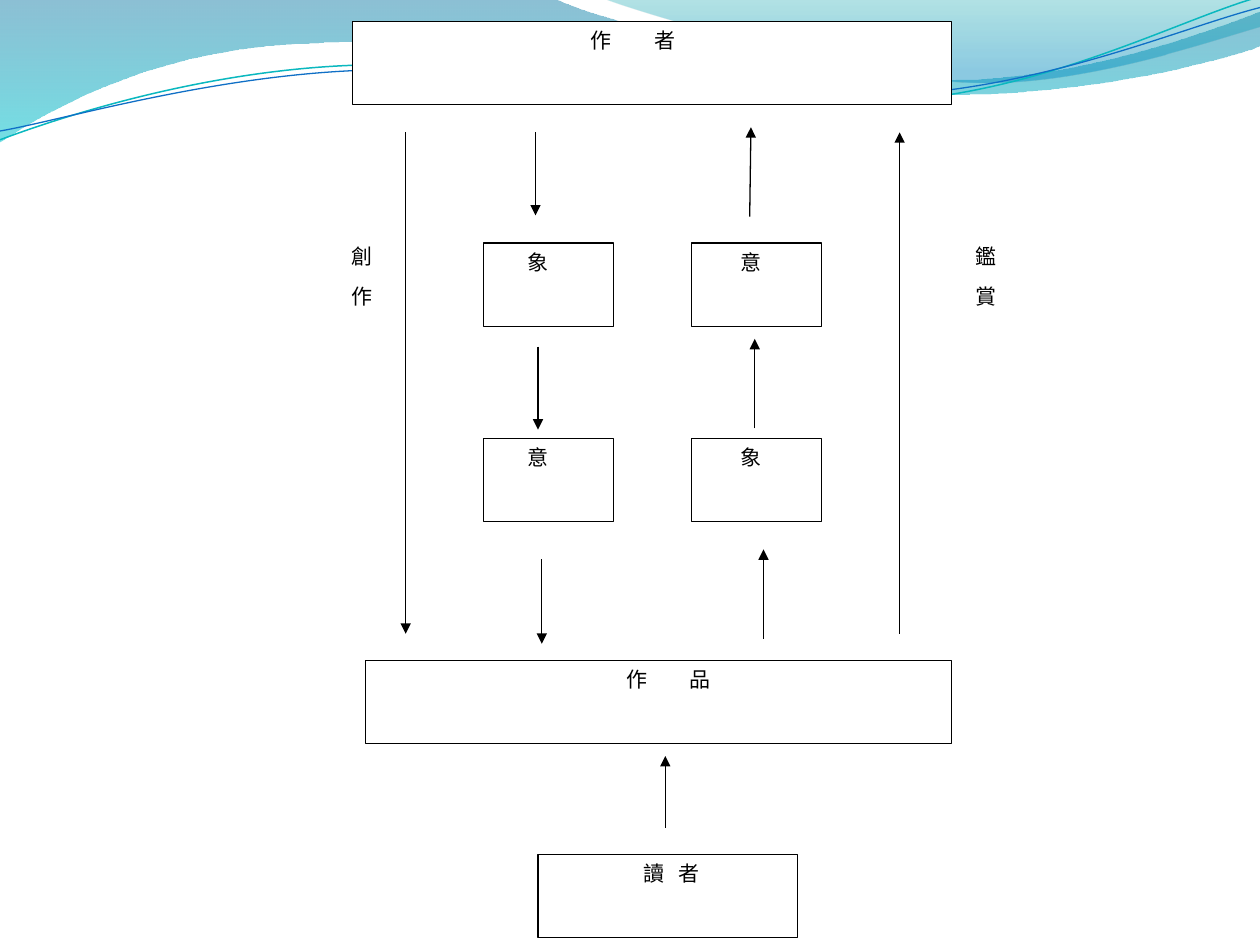
from pptx import Presentation
from pptx.dml.color import RGBColor
from pptx.enum.shapes import MSO_CONNECTOR, MSO_SHAPE
from pptx.enum.text import MSO_ANCHOR, PP_ALIGN
from pptx.oxml.ns import qn
from pptx.util import Inches, Pt
from lxml.etree import SubElement

COLORS = {
    "ink": "000000", "paper": "FFFFFF",
    "deep blue": "0074A1", "aqua": "00C6CF", "teal": "00A1A9", "sky": "008BBF",
    "turquoise line": "0AB8BF", "blue line": "0F6FC6",
}
RGB = {name: RGBColor.from_string(value) for name, value in COLORS.items()}
SPACE_WIDTH = 2.7

presentation = Presentation()
presentation.slide_width = Inches(10)
presentation.slide_height = Inches(7.5)
column = presentation.slide_width / 10
row = presentation.slide_height / 7.5
slide = presentation.slides.add_slide(presentation.slide_layouts[6])


def add_wave(start, segments, closed):
    points = [start]
    for segment in segments:
        points.extend(zip(segment[::2], segment[1::2]))
    scaled = [(int(x * column), int(y * row)) for x, y in points]
    builder = slide.shapes.build_freeform(*scaled[0])
    builder.add_line_segments(scaled[1:], close=closed)
    shape = builder.convert_to_shape()
    shape.shadow.inherit = False
    outline = next(shape.element.iter(qn("a:path")))
    lines = iter(outline.findall(qn("a:lnTo")))
    for segment in segments:
        line = next(lines)
        if len(segment) == 6:
            curve = SubElement(outline, qn("a:cubicBezTo"))
            line.addprevious(curve)
            for control in (line, next(lines), next(lines)):
                curve.append(control[0])
                outline.remove(control)
    return shape


def add_box(left, top, width, height, characters, gap, inset, line, vertical):
    shape = slide.shapes.add_shape(
        MSO_SHAPE.RECTANGLE,
        int(left * column), int(top * row), int(width * column), int(height * row),
    )
    shape.shadow.inherit = False
    shape.fill.solid()
    shape.fill.fore_color.rgb = RGB["paper"]
    shape.line.color.rgb = RGB[line]
    shape.line.width = Pt(0.75)
    frame = shape.text_frame
    frame.word_wrap = True
    frame.vertical_anchor = MSO_ANCHOR.TOP
    frame.margin_left = Inches(inset)
    if vertical:
        frame._txBody.bodyPr.set("vert", "eaVert")
        frame.margin_top = Inches(0.1)
    paragraph = frame.paragraphs[0]
    paragraph.alignment = PP_ALIGN.LEFT
    run = paragraph.add_run()
    run.text = " ".join(characters)
    run.font.size = Pt(12)
    run.font.name = "Calibri"
    run.font.color.rgb = RGB["ink"]
    if gap > 1:
        run.font._element.set("spc", str(round((gap - 1) * SPACE_WIDTH * 50)))


filled_waves = [
    ((0, 0), [
        (4.4, -0.01), (4.76, 0.17, 6.64, 0.63, 7.58, 0.63),
        (8.53, 0.63, 9.58, 0.26, 10, 0.09), (10.01, 0.36),
        (9.83, 0.44, 8.7, 0.76, 7.46, 0.75), (6.22, 0.75, 3.82, 0.28, 2.57, 0.34),
        (1.29, 0.36, 0.46, 0.83, -0.01, 1.13), (0, 0),
    ], [("deep blue", 0, 45), ("aqua", 1, 55)]),
    ((4.79, -0.01), [
        (5.09, 0.11, 6.82, 0.62, 7.69, 0.65),
        (8.56, 0.69, 9.61, 0.32, 10, 0.21), (10, 0), (4.79, -0.01),
    ], [("teal", 0, 30), ("sky", 0.8, 45)]),
]
for start, segments, stops in filled_waves:
    wave = add_wave(start, segments, True)
    wave.line.fill.background()
    wave.fill.gradient()
    wave.fill.gradient_angle = 270
    for stop, (color, position, opacity) in zip(wave.fill.gradient_stops, stops):
        stop.color.rgb = RGB[color]
        stop.position = position
    gradient = wave.element.spPr.find(qn("a:gradFill"))
    for color_element, (color, position, opacity) in zip(gradient.iter(qn("a:srgbClr")), stops):
        SubElement(color_element, qn("a:alpha")).set("val", str(opacity * 1000))

line_waves = [
    ((0, 1.11), [
        (0.48, 0.93, 1.58, 0.57, 2.77, 0.52), (3.95, 0.47, 5.93, 0.89, 7.13, 0.8),
        (8.33, 0.71, 9.38, 0.15, 9.98, -0.02),
    ], "turquoise line", 0.85),
    ((0, 1.04), [
        (0.47, 0.96, 1.64, 0.61, 2.83, 0.56), (4.03, 0.51, 5.97, 0.84, 7.17, 0.75),
        (8.36, 0.67, 9.41, 0.21, 10, 0.06),
    ], "blue line", 0.75),
]
for start, segments, color, width in line_waves:
    wave = add_wave(start, segments, False)
    wave.fill.background()
    wave.line.color.rgb = RGB[color]
    wave.line.width = Pt(width)

wide_boxes = [
    (2.8, 0.17, 4.75, "作者", 9, 1.89),
    (2.9, 5.24, 4.65, "作品", 9, 2.07),
    (4.27, 6.78, 2.06, "讀者", 3, 0.84),
]
for left, top, width, characters, gap, inset in wide_boxes:
    add_box(left, top, width, 0.66, characters, gap, inset, "ink", False)

for left, characters, inset in [(3.84, "象意", 0.35), (5.49, "意象", 0.39)]:
    for index, character in enumerate(characters):
        add_box(left, 1.93 + 1.55 * index, 1.03, 0.66, character, 1, inset, "ink", False)

for left, characters in [(2.19, "創作"), (7.14, "鑑賞")]:
    add_box(left, 1.85, 0.83, 2.21, characters, 4, 0.05, "paper", True)

arrows = [
    (4.25, 1.05, 4.25, 1.71), (4.27, 2.75, 4.27, 3.41), (4.3, 4.44, 4.3, 5.11),
    (5.95, 1.72, 5.96, 1.01), (5.99, 3.4, 5.99, 2.69), (6.06, 5.07, 6.06, 4.36),
    (5.28, 6.57, 5.28, 6), (3.22, 1.05, 3.22, 5.03), (7.14, 5.03, 7.14, 1.05),
]
for start_x, start_y, end_x, end_y in arrows:
    arrow = slide.shapes.add_connector(
        MSO_CONNECTOR.STRAIGHT,
        int(start_x * column), int(start_y * row), int(end_x * column), int(end_y * row),
    )
    arrow.line.color.rgb = RGB["ink"]
    arrow.line.width = Pt(0.75)
    SubElement(arrow.line._get_or_add_ln(), qn("a:tailEnd")).set("type", "triangle")
    SubElement(arrow._element.spPr, qn("a:effectLst"))

presentation.save("out.pptx")
